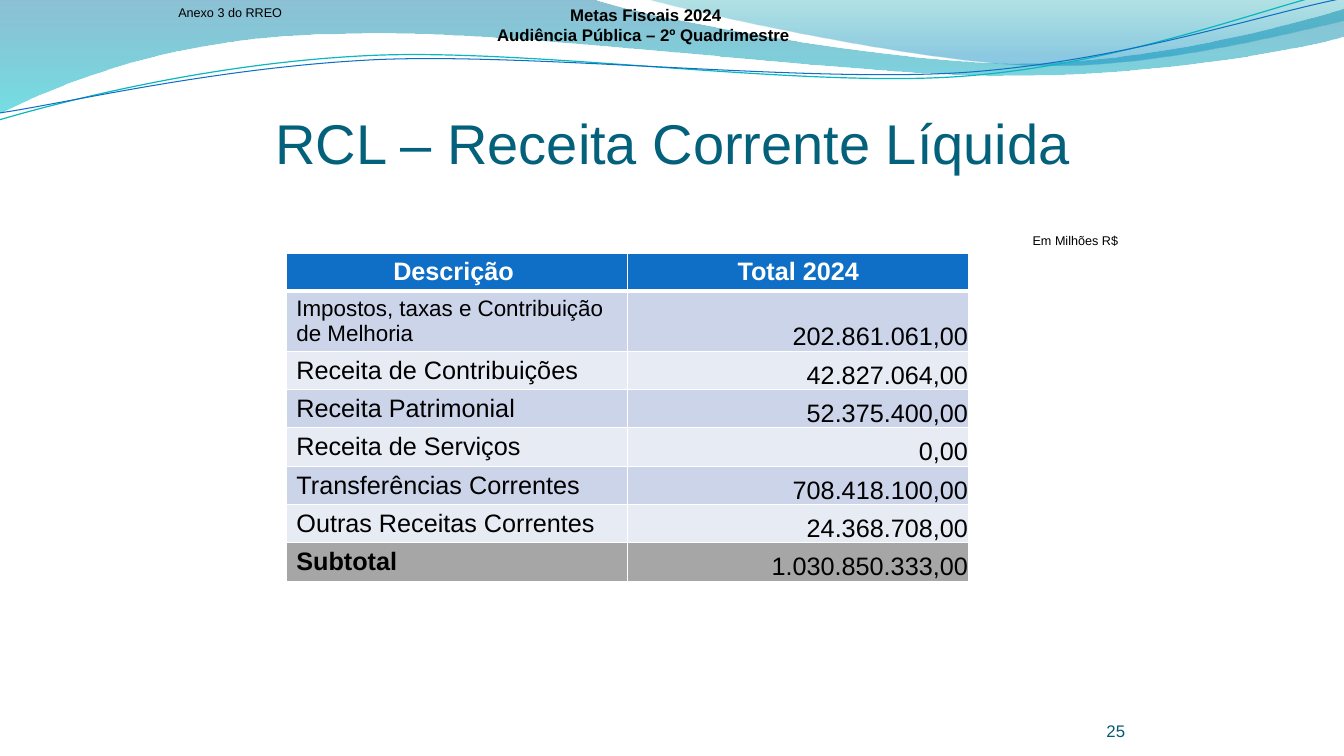
from math import cos, radians, sin

from lxml.etree import SubElement
from pptx import Presentation
from pptx.dml.color import RGBColor
from pptx.enum.text import MSO_ANCHOR as Anchor, MSO_AUTO_SIZE as AutoSize, PP_ALIGN as Align
from pptx.oxml.ns import qn
from pptx.util import Inches, Pt

FONT = "Arial"
COLORS = {
    "black": "000000", "white": "FFFFFF", "title": "04617B", "number": "035C75",
    "header": "0F6FC6", "band_dark": "CCD4EA", "band_light": "E7EBF4",
    "subtotal": "A6A6A6", "line_teal": "09B7BF", "line_blue": "0F6FC6",
    "deep_blue": "0074A0", "turquoise": "00C4CD", "blue": "008ABF", "teal": "00A0A8",
}
LINE_TILT = 2.7

# Outlines in inches: one point is a straight step, three points are a cubic curve
BACK_WAVE = [
    [(0, 0)], [(5.87, -0.01)], [(6.34, 0.17), (8.85, 0.63), (10.11, 0.63)],
    [(11.37, 0.63), (12.78, 0.26), (13.33, 0.09)], [(13.35, 0.36)],
    [(13.11, 0.44), (11.6, 0.76), (9.94, 0.75)], [(8.29, 0.75), (5.09, 0.28), (3.43, 0.34)],
    [(1.72, 0.35), (0.61, 0.83), (-0.01, 1.13)], [(0, 0)],
]
FRONT_WAVE = [
    [(6.39, -0.01)], [(6.79, 0.11), (9.09, 0.62), (10.25, 0.65)],
    [(11.41, 0.69), (12.82, 0.32), (13.33, 0.21)], [(13.33, 0)], [(6.39, -0.01)],
]
TEAL_LINE = [
    [(-0.01, 1.19)], [(0.64, 1), (2.11, 0.62), (3.69, 0.55)],
    [(5.27, 0.48), (7.9, 0.87), (9.5, 0.76)], [(11.1, 0.65), (12.52, 0.08), (13.31, -0.1)],
]
BLUE_LINE = [
    [(0, 1.12)], [(0.63, 1.03), (2.18, 0.66), (3.78, 0.59)],
    [(5.37, 0.53), (7.96, 0.82), (9.55, 0.72)], [(11.15, 0.61), (12.55, 0.13), (13.34, -0.02)],
]

REVENUES = [
    ("Impostos, taxas e Contribuição de Melhoria", "202.861.061,00"),
    ("Receita de Contribuições", "42.827.064,00"),
    ("Receita Patrimonial", "52.375.400,00"),
    ("Receita de Serviços", "0,00"),
    ("Transferências Correntes", "708.418.100,00"),
    ("Outras Receitas Correntes", "24.368.708,00"),
    ("Subtotal", "1.030.850.333,00"),
]


def color(name):
    return RGBColor.from_string(COLORS[name])


def style(para, size, color_name, align=Align.LEFT, bold=False):
    para.alignment = align
    para.font.name = FONT
    para.font.size = Pt(size)
    para.font.bold = bold
    para.font.color.rgb = color(color_name)


def place(shape, box):
    shape.left, shape.top, shape.width, shape.height = map(Inches, box)


def set_margins(target, margins):
    (target.margin_left, target.margin_top,
     target.margin_right, target.margin_bottom) = map(Inches, margins)


# Header waves
def turn(outline, center, degrees):
    cosine, sine = cos(radians(degrees)), sin(radians(degrees))
    offsets = [[(x - center[0], y - center[1]) for x, y in step] for step in outline]
    return [[(center[0] + x * cosine - y * sine, center[1] + x * sine + y * cosine)
             for x, y in step] for step in offsets]


def add_outline(shapes, outline, close):
    points = [(Inches(x), Inches(y)) for step in outline for x, y in step]
    builder = shapes.build_freeform(*points[0], scale=1.0)
    builder.add_line_segments(points[1:], close=close)
    shape = builder.convert_to_shape()
    shape.shadow.inherit = False
    # Join each three straight segments of a curved step into one cubic curve
    segments = iter(list(shape.element.iter(qn("a:lnTo"))))
    for step in outline[1:]:
        first, *others = [next(segments) for _ in step]
        if others:
            curve = SubElement(first.getparent(), qn("a:cubicBezTo"))
            first.addprevious(curve)
            for segment in (first, *others):
                curve.append(segment[0])
                segment.getparent().remove(segment)
    return shape


def add_wave(page, outline, stops, angle):
    wave = add_outline(page.shapes, outline, True)
    wave.line.fill.background()
    wave.fill.gradient()
    wave.fill.gradient_angle = angle
    for stop, (position, color_name, _) in zip(wave.fill.gradient_stops, stops):
        stop.position = position
        stop.color.rgb = color(color_name)
    for element, (_, _, opacity) in zip(wave.element.iter(qn("a:srgbClr")), stops):
        SubElement(element, qn("a:alpha")).set("val", str(opacity * 1000))


def add_header_waves(page):
    add_wave(page, BACK_WAVE, [(0, "deep_blue", 45), (1, "turquoise", 55)], 270)
    add_wave(page, FRONT_WAVE, [(0.2, "blue", 45), (1, "teal", 30)], 90)
    group = page.shapes.add_group_shape()
    for outline, center, color_name, width in (
            (TEAL_LINE, (6.65, 0.58), "line_teal", 0.85),
            (BLUE_LINE, (6.67, 0.59), "line_blue", 0.75)):
        curve = add_outline(group.shapes, turn(outline, center, LINE_TILT), False)
        curve.rotation = 360 - LINE_TILT
        curve.fill.background()
        curve.line.color.rgb = color(color_name)
        curve.line.width = Pt(width)


# Title and labels
def add_title(page, box):
    title = page.shapes.title
    place(title, box)
    frame = title.text_frame
    set_margins(frame, (0, 0.05, 0, 0))
    frame.vertical_anchor = Anchor.MIDDLE
    frame.text = "RCL – Receita Corrente Líquida"
    style(frame.paragraphs[0], 40, "title", Align.CENTER)


def add_label(page, box, lines, size, color_name="black", align=Align.LEFT, bold=False,
              anchor=Anchor.TOP, margins=(0.1, 0.05, 0.1, 0.05), fit=AutoSize.SHAPE_TO_FIT_TEXT):
    frame = page.shapes.add_textbox(*map(Inches, box)).text_frame
    frame.word_wrap = True
    frame.auto_size = fit
    frame.vertical_anchor = anchor
    set_margins(frame, margins)
    frame.text = "\n".join(lines)
    for para in frame.paragraphs:
        style(para, size, color_name, align, bold)


# Revenue table
def fill_cell(cell, text, fill_name, widths, size, color_name, align, bold):
    properties = cell._tc.get_or_add_tcPr()
    for side, width in zip("LRTB", widths):
        line = SubElement(properties, qn(f"a:ln{side}"), w=str(Pt(width)))
        fill = SubElement(line, qn("a:solidFill"))
        SubElement(fill, qn("a:srgbClr"), val=COLORS["white"])
    cell.fill.solid()
    cell.fill.fore_color.rgb = color(fill_name)
    cell.text = text
    style(cell.text_frame.paragraphs[0], size, color_name, align, bold)


def add_revenue_table(page, box):
    thin, thick = 1, 3
    holder = page.shapes.add_table(len(REVENUES) + 1, 2, *map(Inches, box))
    table = holder.table
    for column in table.columns:
        column.width = Inches(box[2] / 2)
    for index, row in enumerate(table.rows):
        row.height = Inches(0.51 if index == 1 else 0.38)
    for column, text in enumerate(("Descrição ", "Total 2024")):
        fill_cell(table.cell(0, column), text, "header", (thin, thin, thin, thick),
                  18, "white", Align.CENTER, True)
    for index, (name, total) in enumerate(REVENUES, start=1):
        last = index == len(REVENUES)
        band = "subtotal" if last else ("band_light", "band_dark")[index % 2]
        widths = (thin, thin, thick if index == 1 else thin, thin)
        fill_cell(table.cell(index, 0), name, band, widths,
                  16 if index == 1 else 18, "black", Align.LEFT, last)
        amount = table.cell(index, 1)
        fill_cell(amount, total, band, widths, 18, "black", Align.RIGHT, False)
        set_margins(amount, (0.01, 0.01, 0.01, 0))
        amount.vertical_anchor = Anchor.BOTTOM
    place(holder, box)


def main():
    deck = Presentation()
    deck.slide_width, deck.slide_height = Inches(13.33), Inches(7.5)
    page = deck.slides.add_slide(deck.slide_layouts[5])
    add_header_waves(page)
    add_title(page, (2.17, 0.76, 9, 1.25))
    add_revenue_table(page, (2.84, 2.51, 6.77, 3.43))
    add_label(page, (10.33, 6.95, 0.83, 0.4), ["25"], 12, "number", Align.RIGHT,
              anchor=Anchor.BOTTOM, margins=(0, 0, 0, 0), fit=AutoSize.NONE)
    add_label(page, (10.14, 2.26, 1.05, 0.25), ["Em Milhões R$"], 9, align=Align.CENTER)
    add_label(page, (1.67, 0, 1.36, 0.25), ["Anexo 3 do RREO"], 9)
    add_label(page, (4.71, 0, 3.39, 0.5),
              ["Metas Fiscais 2024", "Audiência Pública – 2º Quadrimestre "],
              12, align=Align.CENTER, bold=True, anchor=Anchor.MIDDLE)
    deck.save("out.pptx")


if __name__ == "__main__":
    main()
